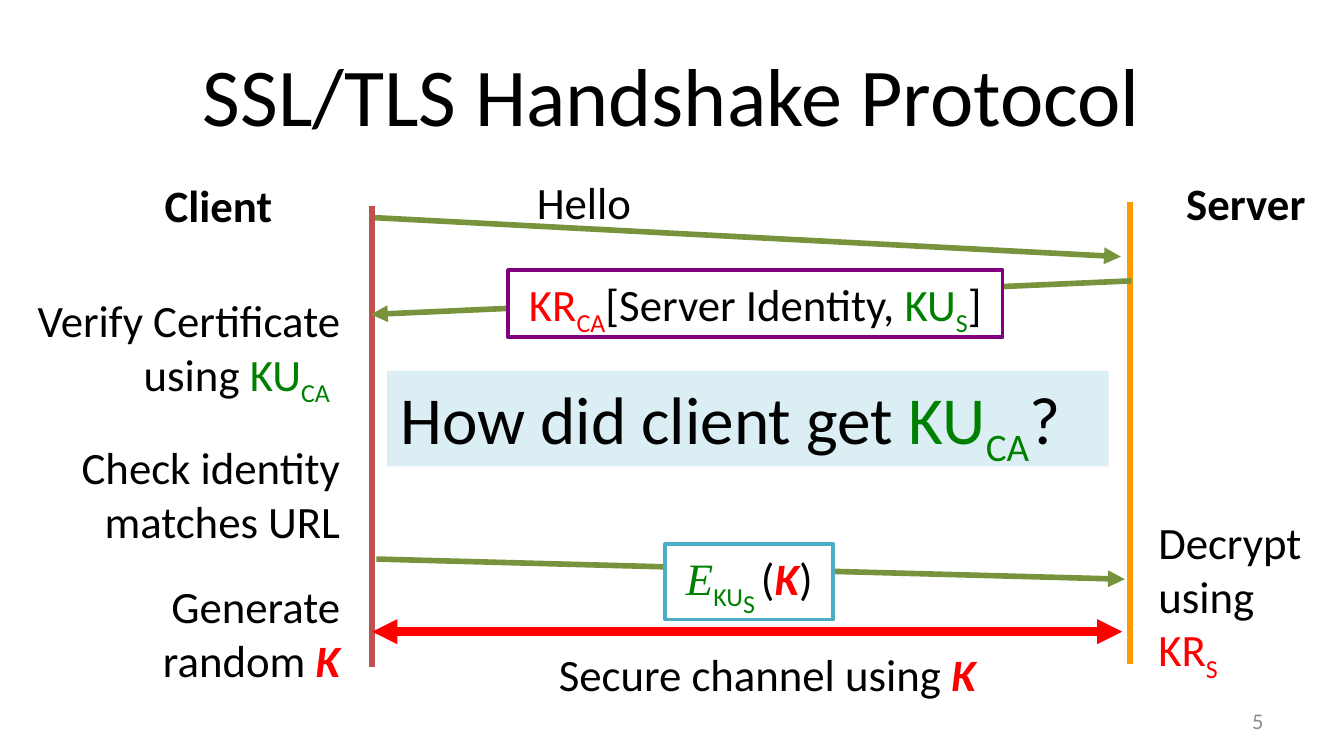
from dataclasses import dataclass

from lxml import etree
from pptx import Presentation
from pptx.dml.color import RGBColor
from pptx.enum.shapes import MSO_CONNECTOR, MSO_SHAPE
from pptx.enum.text import MSO_ANCHOR, MSO_AUTO_SIZE, PP_ALIGN
from pptx.oxml.ns import qn
from pptx.util import Inches, Pt

STRAIGHT = MSO_CONNECTOR.STRAIGHT
RECTANGLE = MSO_SHAPE.RECTANGLE
FIXED_SIZE = MSO_AUTO_SIZE.NONE
TOP, MIDDLE = MSO_ANCHOR.TOP, MSO_ANCHOR.MIDDLE
LEFT, CENTER, RIGHT = PP_ALIGN.LEFT, PP_ALIGN.CENTER, PP_ALIGN.RIGHT

BLACK = RGBColor(0x00, 0x00, 0x00)
WHITE = RGBColor(0xFF, 0xFF, 0xFF)
GRAY = RGBColor(0x8C, 0x8C, 0x8C)
PRIVATE_RED = RGBColor(0xFF, 0x00, 0x00)
PUBLIC_GREEN = RGBColor(0x00, 0x80, 0x00)
CLIENT_RED = RGBColor(0xC0, 0x50, 0x4D)
SERVER_ORANGE = RGBColor(0xFF, 0x99, 0x00)
MESSAGE_GREEN = RGBColor(0x77, 0x93, 0x3C)
PURPLE = RGBColor(0x80, 0x00, 0x80)
TEAL = RGBColor(0x4B, 0xAC, 0xC6)
PALE_BLUE = RGBColor(0xDB, 0xEE, 0xF4)

BODY_FONT = "Calibri"
MATH_FONT = "Times New Roman"
STEP_GAP = Pt(17)


@dataclass(frozen=True)
class Span:
    text: str
    color: RGBColor = BLACK
    bold: bool = False
    italic: bool = False
    baseline: int = 0
    font: str = BODY_FONT
    break_after: bool = False


@dataclass(frozen=True)
class Label:
    """Text with an optional filled and outlined rectangle; lengths in inches."""
    left: float
    top: float
    width: float
    height: float
    paragraphs: list[list[Span]]
    align: PP_ALIGN = CENTER
    size: int = 24
    wrap: bool = False
    anchor: MSO_ANCHOR = TOP
    fill: RGBColor | None = None
    outline: RGBColor | None = None
    bottom_inset: float = 0.05


@dataclass(frozen=True)
class Line:
    start: tuple[float, float]
    end: tuple[float, float]
    color: RGBColor
    width: float = 3
    head: bool = False
    tail: bool = False


def key(name: str, owner: str, color: RGBColor) -> list[Span]:
    """A key name with its owner as subscript."""
    return [Span(name, color), Span(owner, color, baseline=-25)]


SESSION_KEY = Span("K", PRIVATE_RED, bold=True, italic=True)

LINES = [
    Line((2.77, 1.53), (2.77, 4.96), CLIENT_RED),
    Line((8.41, 1.5), (8.41, 4.94), SERVER_ORANGE),
    Line((2.79, 1.62), (8.34, 1.91), MESSAGE_GREEN, tail=True),
    Line((8.42, 2.09), (2.76, 2.34), MESSAGE_GREEN, tail=True),
    Line((8.37, 4.31), (2.8, 4.16), MESSAGE_GREEN, head=True),
    Line((2.77, 4.7), (8.35, 4.7), PRIVATE_RED, 4.5, head=True, tail=True),
]

LABELS = [
    Label(1.12, 1.27, 1.01, 0.5, [[Span("Client", bold=True)]]),
    Label(8.72, 1.26, 1.1, 0.5, [[Span("Server", bold=True)]]),
    Label(3.89, 1.25, 0.91, 0.5, [[Span("Hello")]]),
    Label(3.78, 2.01, 3.68, 0.5,
          [[*key("KR", "CA", PRIVATE_RED), Span("[Server Identity, "),
            *key("KU", "S", PUBLIC_GREEN), Span("]")]],
          fill=WHITE, outline=PURPLE),
    Label(0.1, 2.13, 2.53, 3,
          [[Span("Verify Certificate using "), *key("KU", "CA", PUBLIC_GREEN), Span(" ")],
           [Span("Check identity matches URL")],
           [Span("Generate random "), SESSION_KEY]],
          align=RIGHT, wrap=True),
    Label(4.95, 4.05, 1.25, 0.56,
          [[Span("E", PUBLIC_GREEN, italic=True, font=MATH_FONT),
            Span("KU", PUBLIC_GREEN, baseline=-25),
            Span("S ", PUBLIC_GREEN, baseline=-40),
            Span("("), SESSION_KEY, Span(")")]],
          fill=WHITE, outline=TEAL, bottom_inset=0.1),
    Label(8.52, 3.78, 1.33, 1.31,
          [[Span("Decrypt", break_after=True), Span("using "),
            *key("KR", "S", PRIVATE_RED)]],
          align=LEFT, wrap=True),
    Label(4.01, 4.76, 3.4, 0.5, [[Span("Secure channel using "), SESSION_KEY]]),
    Label(2.88, 2.76, 5.37, 0.71,
          [[Span("How did client get "), *key("KU", "CA", PUBLIC_GREEN), Span("?")]],
          align=LEFT, size=36, wrap=True, fill=PALE_BLUE),
    Label(7.17, 5.21, 2.33, 0.3, [[Span("5", GRAY)]],
          align=RIGHT, size=12, wrap=True, anchor=MIDDLE),
]


def draw_line(page, line: Line) -> None:
    points = [Inches(value) for value in (*line.start, *line.end)]
    connector = page.shapes.add_connector(STRAIGHT, *points)
    connector.line.color.rgb = line.color
    connector.line.width = Pt(line.width)
    outline = connector.line._get_or_add_ln()
    for tag, wanted in (("a:headEnd", line.head), ("a:tailEnd", line.tail)):
        if wanted:
            etree.SubElement(outline, qn(tag), type="triangle")
    etree.SubElement(connector._element.spPr, qn("a:effectLst"))


def add_span(para, span: Span, size: int) -> None:
    run = para.add_run()
    run.text = span.text
    run.font.name = span.font
    run.font.size = Pt(size)
    run.font.bold = span.bold
    run.font.italic = span.italic
    run.font.color.rgb = span.color
    if span.baseline:
        run._r.get_or_add_rPr().set("baseline", str(span.baseline * 1000))
    if span.break_after:
        para.add_line_break()


def draw_label(page, label: Label) -> None:
    area = [Inches(value) for value in (label.left, label.top, label.width, label.height)]
    if label.fill is None:
        box = page.shapes.add_textbox(*area)
    else:
        box = page.shapes.add_shape(RECTANGLE, *area)
        box.shadow.inherit = False
        box.fill.solid()
        box.fill.fore_color.rgb = label.fill
        if label.outline is None:
            box.line.fill.background()
        else:
            box.line.color.rgb = label.outline
            box.line.width = Pt(2)
    frame = box.text_frame
    frame.word_wrap = label.wrap
    frame.auto_size = FIXED_SIZE
    frame.vertical_anchor = label.anchor
    frame.margin_bottom = Inches(label.bottom_inset)
    for index, spans in enumerate(label.paragraphs):
        para = frame.add_paragraph() if index else frame.paragraphs[0]
        para.alignment = label.align
        if index:
            para.space_before = STEP_GAP
        for span in spans:
            add_span(para, span, label.size)


def set_title(page, text: str) -> None:
    title = page.shapes.title
    title.left, title.top = Inches(0.5), Inches(0.23)
    title.width, title.height = Inches(9), Inches(0.94)
    frame = title.text_frame
    frame.text = text
    frame.auto_size = FIXED_SIZE
    frame.vertical_anchor = MIDDLE
    para = frame.paragraphs[0]
    para.alignment = CENTER
    font = para.runs[0].font
    font.name, font.size = BODY_FONT, Pt(44)
    font.color.rgb = BLACK


def main() -> None:
    deck = Presentation()
    deck.slide_width = Inches(10)
    deck.slide_height = deck.slide_width * 9 // 16
    page = deck.slides.add_slide(deck.slide_layouts.get_by_name("Title Only"))
    set_title(page, "SSL/TLS Handshake Protocol")
    for line in LINES:
        draw_line(page, line)
    for label in LABELS:
        draw_label(page, label)
    deck.save("out.pptx")


if __name__ == "__main__":
    main()
